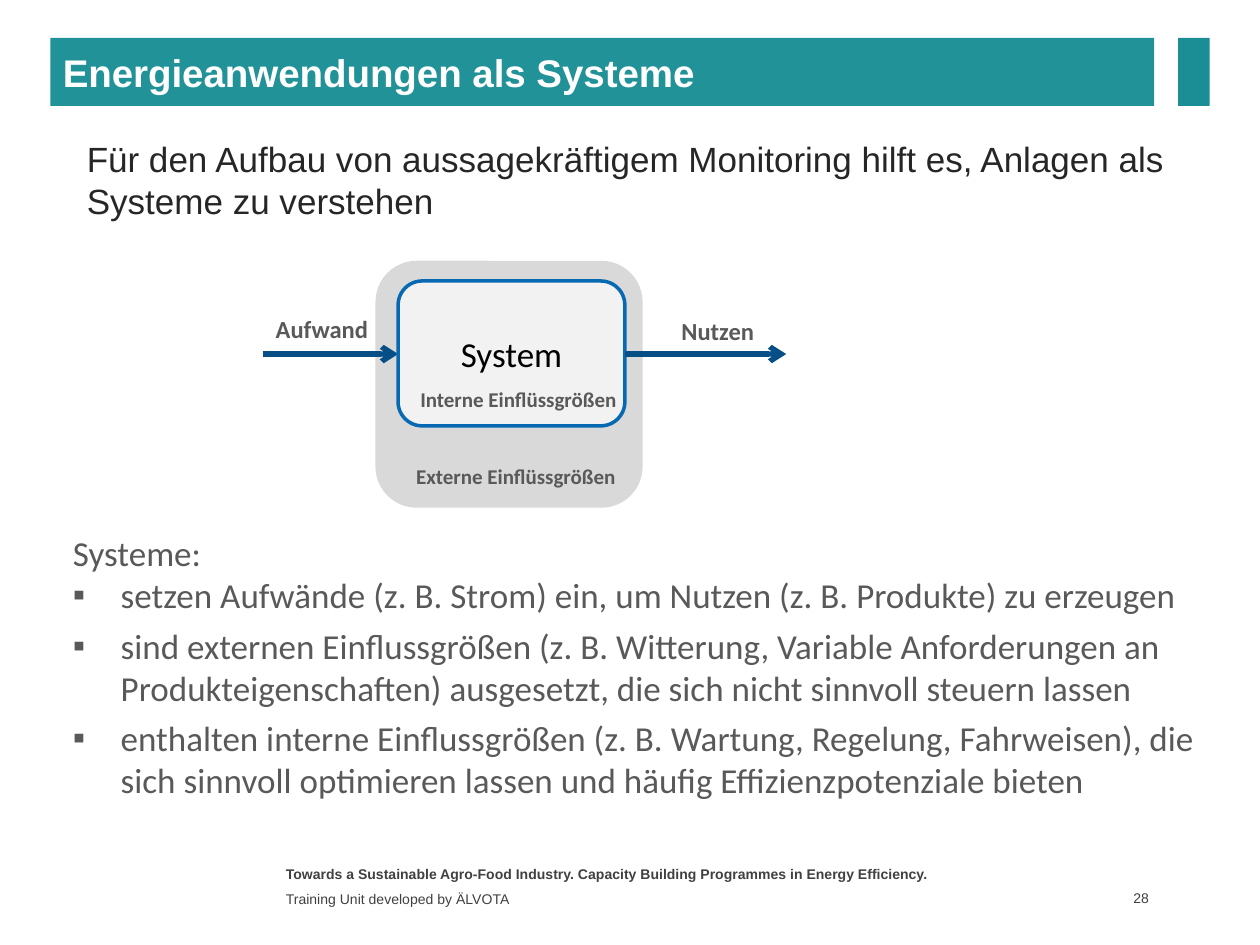
from lxml import etree
from pptx import Presentation
from pptx.dml.color import RGBColor
from pptx.enum import shapes, text
from pptx.oxml import ns
from pptx.util import Inches, Pt

COLORS = {
    "title_bar": "209298", "accent": "1B8E95", "white": "FFFFFF",
    "lead": "262626", "body": "595959", "footer": "404040", "black": "000000",
    "outer": "D9D9D9", "inner": "F2F2F2", "border": "0669B2", "arrow": "054F86",
}
LEFT, CENTER, RIGHT = text.PP_ALIGN.LEFT, text.PP_ALIGN.CENTER, text.PP_ALIGN.RIGHT
TOP, MIDDLE = text.MSO_ANCHOR.TOP, text.MSO_ANCHOR.MIDDLE
RECT, ROUNDED = shapes.MSO_SHAPE.RECTANGLE, shapes.MSO_SHAPE.ROUNDED_RECTANGLE
HANG = Inches(0.38)
FLOW_Y = 2.81


def rgb(name):
    return RGBColor.from_string(COLORS[name])


def add_bullet(p):
    pPr = p._p.get_or_add_pPr()
    pPr.set("marL", str(HANG))
    pPr.set("indent", str(-HANG))
    etree.SubElement(pPr, ns.qn("a:buFont"), typeface="Arial")
    etree.SubElement(pPr, ns.qn("a:buChar"), char="▪")


def write(tf, content, size=20, font="Calibri", color="body", bold=False,
          align=LEFT, anchor=TOP, bullet=False, first=True):
    """Write one paragraph into a text frame, as its first or a further one."""
    tf.word_wrap = True
    tf.vertical_anchor = anchor
    p = tf.paragraphs[0] if first else tf.add_paragraph()
    p.alignment = align
    if bullet:
        add_bullet(p)
    r = p.add_run()
    r.text = content
    r.font.size, r.font.name, r.font.bold = Pt(size), font, bold
    r.font.color.rgb = rgb(color)


def add_text(s, box, content, **fmt):
    tf = s.shapes.add_textbox(*map(Inches, box)).text_frame
    write(tf, content, **fmt)
    return tf


def add_block(s, kind, box, fill, border=None):
    sp = s.shapes.add_shape(kind, *map(Inches, box))
    sp.shadow.inherit = False
    sp.fill.solid()
    sp.fill.fore_color.rgb = rgb(fill)
    if border:
        sp.line.color.rgb = rgb(border)
        sp.line.width = Pt(2)
    else:
        sp.line.fill.background()
    return sp


def add_arrow(s, x1, x2):
    line = s.shapes.add_connector(shapes.MSO_CONNECTOR.STRAIGHT, Inches(x1),
                                  Inches(FLOW_Y), Inches(x2), Inches(FLOW_Y))
    line.line.color.rgb = rgb("arrow")
    line.line.width = Pt(3)
    etree.SubElement(line.line._get_or_add_ln(), ns.qn("a:tailEnd"), type="arrow")
    etree.SubElement(line._element.spPr, ns.qn("a:effectLst"))


def add_header(s):
    bar = add_block(s, RECT, (0.4, 0.3, 8.76, 0.54), "title_bar")
    write(bar.text_frame, "Energieanwendungen als Systeme", size=22,
          font="Arial", color="white", bold=True, anchor=MIDDLE)
    add_block(s, RECT, (9.35, 0.3, 0.25, 0.54), "accent")
    add_text(s, (0.59, 1.04, 9.21, 0.92),
             "Für den Aufbau von aussagekräftigem Monitoring hilft es, "
             "Anlagen als Systeme zu verstehen", font="Arial", color="lead")


def add_diagram(s):
    # Surroundings, input arrow, system, output arrow
    add_block(s, ROUNDED, (2.98, 2.07, 2.12, 1.96), "outer")
    add_arrow(s, 2.09, 3.16)
    system = add_block(s, ROUNDED, (3.16, 2.23, 1.8, 1.15), "inner", "border")
    tf = system.text_frame
    tf.margin_left = tf.margin_right = tf.margin_top = tf.margin_bottom = 0
    write(tf, "System", color="black", align=CENTER, anchor=MIDDLE)
    add_arrow(s, 4.96, 6.24)

    # Labels
    for box, label, size, align in (
        ((2.09, 2.44, 1.07, 0.27), "Aufwand", 14, LEFT),
        ((5.31, 2.46, 1.07, 0.27), "Nutzen", 14, LEFT),
        ((3.17, 3.02, 1.89, 0.29), "Interne Einflüssgrößen", 12, CENTER),
        ((3.08, 3.63, 2.03, 0.29), "Externe Einflüssgrößen", 12, CENTER),
    ):
        add_text(s, box, label, size=size, bold=True, align=align)


def add_explanation(s):
    tf = add_text(s, (0.48, 4.17, 9.15, 0.77), "Systeme:")
    write(tf, "setzen Aufwände (z. B. Strom) ein, um Nutzen (z. B. Produkte) "
              "zu erzeugen", bullet=True, first=False)
    for top, content in (
        (4.91, "sind externen Einflussgrößen (z. B. Witterung, Variable "
               "Anforderungen an Produkteigenschaften) ausgesetzt, die sich "
               "nicht sinnvoll steuern lassen"),
        (5.64, "enthalten interne Einflussgrößen (z. B. Wartung, Regelung, "
               "Fahrweisen), die sich sinnvoll optimieren lassen und häufig "
               "Effizienzpotenziale bieten"),
    ):
        add_text(s, (0.48, top, 9.4, 0.77), content, bullet=True)


def add_footer(s):
    small = {"size": 8, "font": "Arial", "color": "footer"}
    add_text(s, (2.17, 6.82, 5.5, 0.21),
             "Towards a Sustainable Agro-Food Industry. Capacity Building "
             "Programmes in Energy Efficiency.", bold=True, **small)
    add_text(s, (2.17, 7.04, 5.5, 0.19), "Training Unit developed by ÄLVOTA",
             anchor=MIDDLE, **small)
    tf = add_text(s, (8.6, 7.03, 0.56, 0.2), "28", align=RIGHT,
                  anchor=MIDDLE, **small)
    tf.margin_right = Inches(0.04)


def main():
    prs = Presentation()
    prs.slide_width, prs.slide_height = Inches(10), Inches(7.5)
    s = prs.slides.add_slide(prs.slide_layouts[6])
    add_header(s)
    add_diagram(s)
    add_explanation(s)
    add_footer(s)
    prs.save("out.pptx")


if __name__ == "__main__":
    main()
